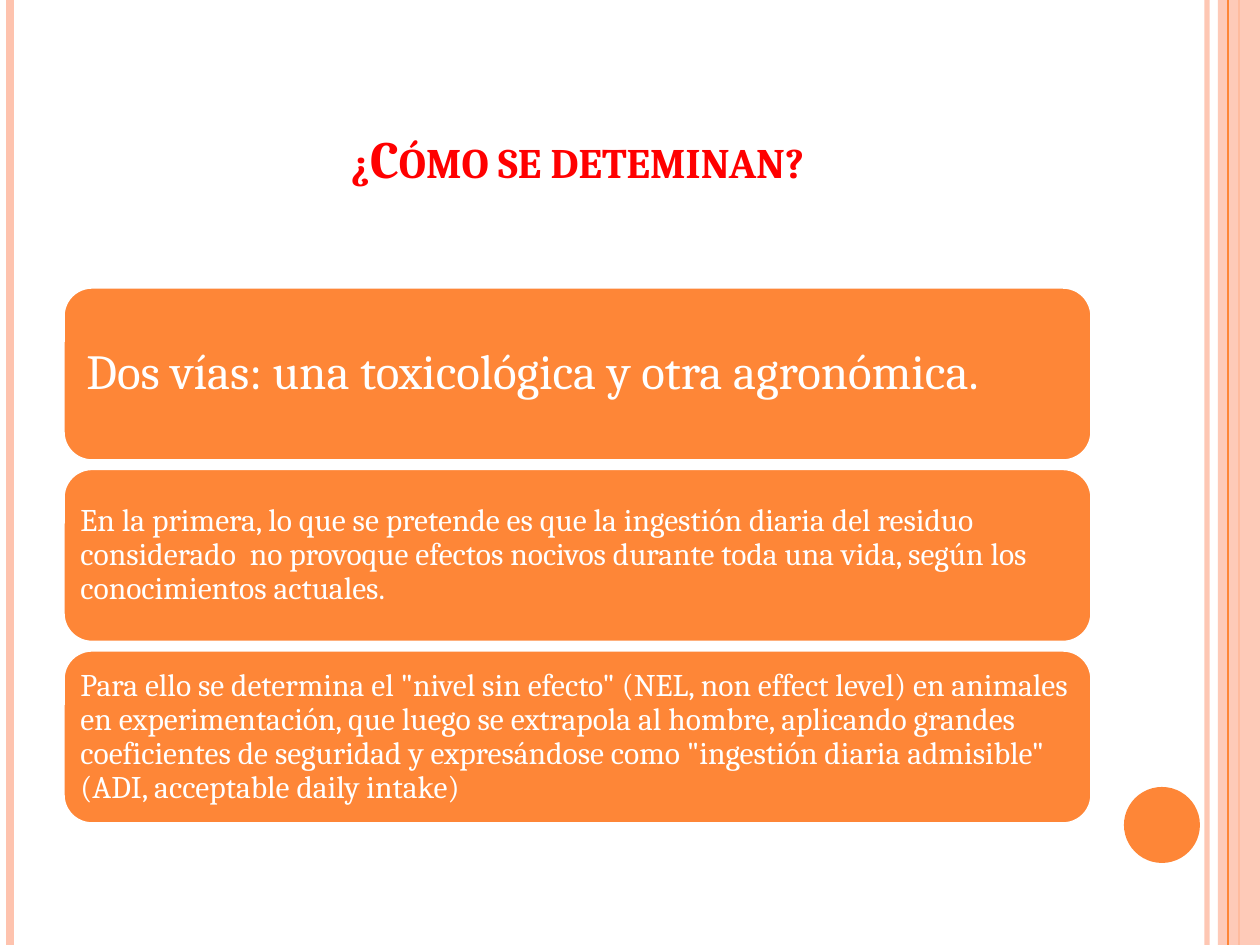
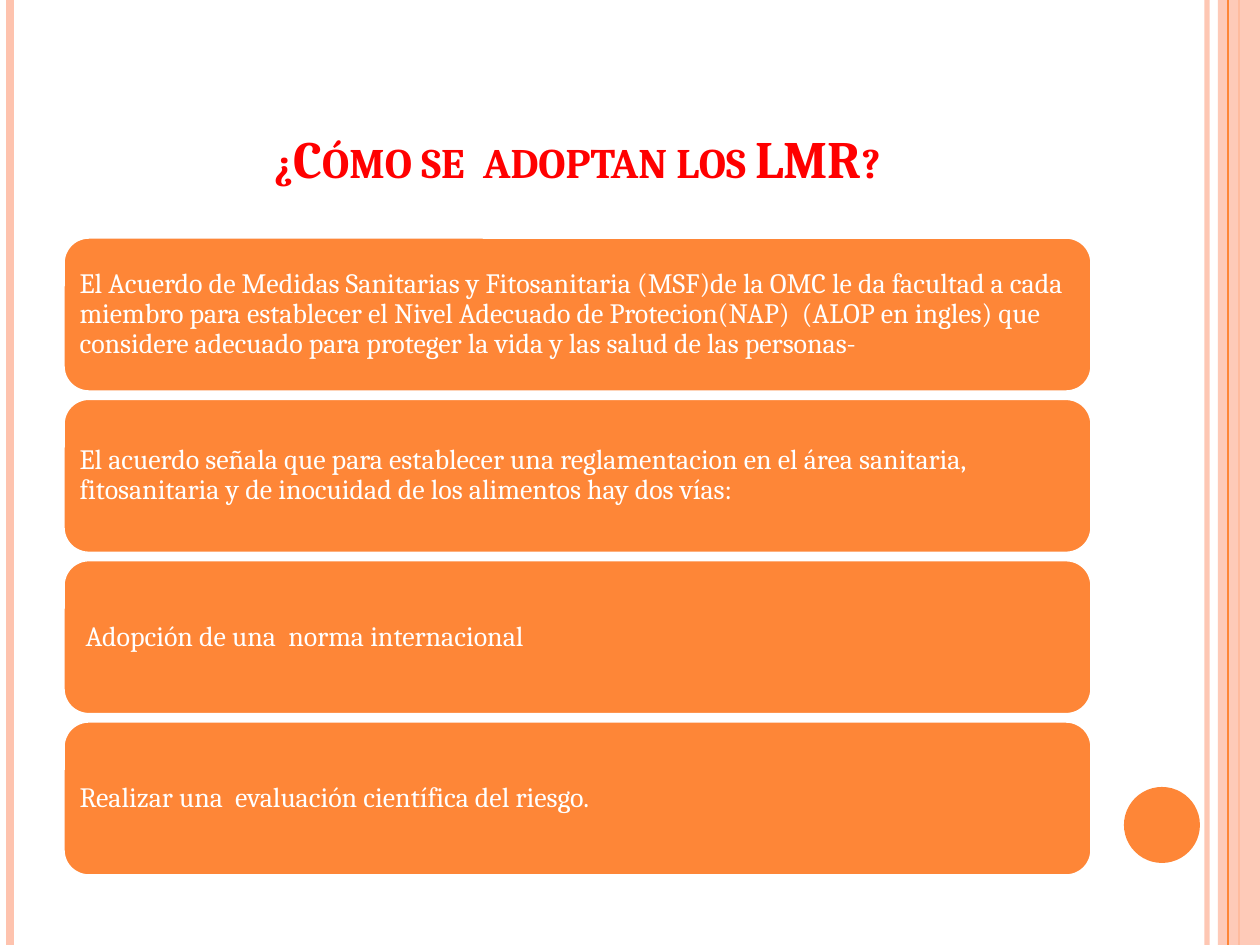
import pptx
import pptx.dml.color
import pptx.enum.shapes
import pptx.enum.text
import pptx.oxml.ns
import pptx.util
from lxml import etree

SLIDE_WIDTH, SLIDE_HEIGHT = 1260, 945
PIXELS_PER_INCH = 126
FONT = "Cambria"
ORANGE, PEACH, RED, WHITE = "FE8637", "FEC3AE", "FF0000", "FFFFFF"
TITLE_BOX = (63, 38, 1029, 157)
SHAPES = pptx.enum.shapes.MSO_SHAPE
ALIGN = pptx.enum.text.PP_ALIGN
ANCHOR = pptx.enum.text.MSO_ANCHOR


def px(length):
    return pptx.util.Emu(round(length * 914400 / PIXELS_PER_INCH))


def paint(color_format, color, opacity=100):
    color_format.rgb = pptx.dml.color.RGBColor.from_string(color)
    if opacity < 100:
        # The accessor owner differs for fills and lines, so the caller passes the XML below.
        raise ValueError("use set_opacity for transparency")


def set_opacity(shape, percent):
    """Makes the first solid colour of the shape partly transparent."""
    color = shape._element.find(".//" + pptx.oxml.ns.qn("a:srgbClr"))
    alpha = etree.SubElement(color, pptx.oxml.ns.qn("a:alpha"))
    alpha.set("val", str(percent * 1000))


def add_block(slide, kind, box, fill, line=None, line_width=0):
    shape = slide.shapes.add_shape(kind, *map(px, box))
    shape.shadow.inherit = False
    shape.fill.solid()
    paint(shape.fill.fore_color, fill)
    if line:
        paint(shape.line.color, line)
        shape.line.width = pptx.util.Pt(line_width)
    else:
        shape.line.fill.background()
    return shape


def add_vertical_line(slide, x, color, width):
    line = slide.shapes.add_connector(
        pptx.enum.shapes.MSO_CONNECTOR.STRAIGHT, px(x), 0, px(x), px(SLIDE_HEIGHT))
    paint(line.line.color, color)
    line.line.width = pptx.util.Pt(width)
    etree.SubElement(line._element.spPr, pptx.oxml.ns.qn("a:effectLst"))
    return line


def write(shape, text, size, color, align=ALIGN.LEFT, anchor=ANCHOR.MIDDLE,
          insets=(9, 9), line_spacing=None, bold=False, small_caps=False):
    """Fills the shape with one paragraph; insets are horizontal and vertical."""
    frame = shape.text_frame
    frame.word_wrap = True
    frame.vertical_anchor = anchor
    frame.margin_left = frame.margin_right = px(insets[0])
    frame.margin_top = frame.margin_bottom = px(insets[1])
    paragraph = frame.paragraphs[0]
    paragraph.alignment = align
    paragraph.line_spacing = line_spacing
    run = paragraph.add_run()
    run.text = text
    run.font.name = FONT
    run.font.size = pptx.util.Pt(size)
    run.font.bold = bold
    paint(run.font.color, color)
    if small_caps:
        run._r.get_or_add_rPr().set("cap", "small")


def add_side_bands(slide):
    set_opacity(add_vertical_line(slide, 1207, PEACH, 3), 93)
    add_vertical_line(slide, 10, PEACH, 4.5)
    add_vertical_line(slide, 1239, ORANGE, 1.5)
    band = add_block(slide, SHAPES.RECTANGLE, (1218, 0, 42, SLIDE_HEIGHT), PEACH)
    set_opacity(band, 87)
    add_vertical_line(slide, 1228, ORANGE, 0.75)
    add_block(slide, SHAPES.OVAL, (1124, 787, 76, 76), ORANGE)


def add_title(slide, box, text):
    title = slide.shapes.add_textbox(*map(px, box))
    write(title, text, 30, RED, align=ALIGN.CENTER, anchor=ANCHOR.BOTTOM,
          insets=(13, 6), bold=True, small_caps=True)


def add_cards(slide, box, card_height, cards):
    """Spreads cards of (text, size, inset) evenly from top to bottom of the box."""
    left, top, width, height = box
    pitch = (height - card_height) / (len(cards) - 1)
    for index, (text, size, inset) in enumerate(cards):
        card = add_block(slide, SHAPES.ROUNDED_RECTANGLE,
                         (left, top + index * pitch, width, card_height),
                         ORANGE, WHITE, 2)
        write(card, text, size, WHITE, insets=(inset, inset), line_spacing=0.9)


def add_card_slide(presentation, title, box, card_height, cards):
    slide = presentation.slides.add_slide(presentation.slide_layouts[6])
    add_side_bands(slide)
    add_title(slide, TITLE_BOX, title)
    add_cards(slide, box, card_height, cards)


def main():
    presentation = pptx.Presentation()
    presentation.slide_width = px(SLIDE_WIDTH)
    presentation.slide_height = px(SLIDE_HEIGHT)
    add_card_slide(presentation, "¿Cómo se deteminan?", (63, 287, 1029, 537), 174, [
        ("Dos vías: una toxicológica y otra agronómica.", 28, 15),
        ("En la primera, lo que se pretende es que la ingestión diaria del residuo "
         "considerado  no provoque efectos nocivos durante toda una vida, según los "
         "conocimientos actuales.", 18, 9),
        ('Para ello se determina el "nivel sin efecto" (NEL, non effect level) en '
         "animales en experimentación, que luego se extrapola al hombre, aplicando "
         "grandes coeficientes de seguridad y expresándose como "
         '"ingestión diaria admisible" (ADI, acceptable daily intake)', 18, 9),
    ])
    add_card_slide(presentation, "¿Cómo se  adoptan los LMR?", (63, 237, 1029, 639), 155, [
        ("El Acuerdo de Medidas Sanitarias y Fitosanitaria (MSF)de la OMC le da "
         "facultad a cada miembro para establecer el Nivel Adecuado de "
         "Protecion(NAP)  (ALOP en ingles) que considere adecuado para proteger la "
         "vida y las salud de las personas-", 16, 9),
        ("El acuerdo señala que para establecer una reglamentacion en el área "
         "sanitaria, fitosanitaria y de inocuidad de los alimentos hay dos vías:", 16, 9),
        (" Adopción de una  norma internacional", 16, 9),
        ("Realizar una  evaluación científica del riesgo.", 16, 9),
    ])
    presentation.save("out.pptx")


if __name__ == "__main__":
    main()
